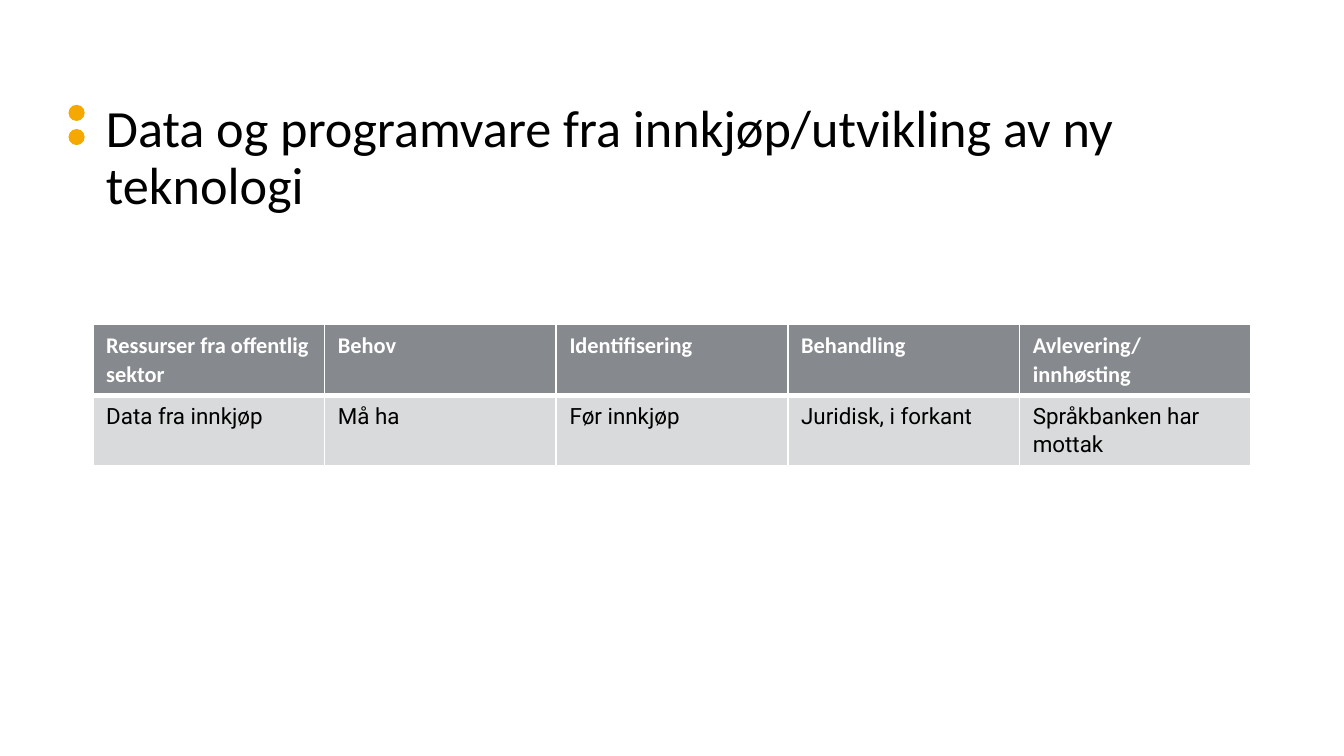
from lxml import etree
from pptx import Presentation
from pptx.dml.color import RGBColor
from pptx.enum import shapes, text
from pptx.oxml import ns
from pptx.util import Inches, Pt

TITLE = "Data og programvare fra innkjøp/utvikling av ny teknologi"
ROWS = [
    ["Ressurser fra offentlig sektor", "Behov", "Identifisering",
     "Behandling", "Avlevering/innhøsting"],
    ["Data fra innkjøp", "Må ha", "Før innkjøp",
     "Juridisk, i forkant", "Språkbanken har mottak"],
]
HEADER = {"fill": "86898D", "color": "FFFFFF", "font": "Calibri", "bold": True,
          "bottom": 3, "height": 0.53}
BODY = {"fill": "D9DADB", "color": "000000", "font": "Roboto", "bold": False,
        "bottom": 1, "height": 0.5}
LEFT, WIDTH = 0.69, 8.62
TABLE_TOP = 2.41
DOT_LEFT, DOT_TOP, DOT_SIZE, DOT_STEP = 0.51, 0.78, 0.12, 0.18


def paint(fill, color):
    fill.solid()
    fill.fore_color.rgb = RGBColor.from_string(color)


def style_font(font, name, size, color, bold=False):
    font.name, font.size, font.bold = name, Pt(size), bold
    font.color.rgb = RGBColor.from_string(color)


def set_borders(cell, widths, color="FFFFFF"):
    """Draw cell borders; widths maps side letters L, R, T, B to points."""
    properties = cell._tc.get_or_add_tcPr()
    for place, (side, width) in enumerate(widths.items()):
        line = etree.Element(ns.qn("a:ln" + side), w=str(int(Pt(width))))
        fill = etree.SubElement(line, ns.qn("a:solidFill"))
        etree.SubElement(fill, ns.qn("a:srgbClr"), val=color)
        properties.insert(place, line)


def add_dots(page):
    for index in range(2):
        dot = page.shapes.add_shape(
            shapes.MSO_SHAPE.OVAL, Inches(DOT_LEFT), Inches(DOT_TOP + index * DOT_STEP),
            Inches(DOT_SIZE), Inches(DOT_SIZE))
        dot.shadow.inherit = False
        paint(dot.fill, "F4A800")
        dot.line.fill.background()


def add_title(page):
    box = page.shapes.add_textbox(Inches(LEFT), Inches(0.71), Inches(WIDTH), Inches(0.95))
    frame = box.text_frame
    frame.word_wrap = True
    frame.vertical_anchor = text.MSO_ANCHOR.MIDDLE
    frame.text = TITLE
    para = frame.paragraphs[0]
    para.line_spacing = 0.9
    style_font(para.runs[0].font, "Calibri", 28, "000000")


def add_resource_table(page):
    styles = (HEADER, BODY)
    table = page.shapes.add_table(
        len(ROWS), len(ROWS[0]), Inches(LEFT), Inches(TABLE_TOP),
        Inches(WIDTH), Inches(sum(style["height"] for style in styles))).table
    for row, (words, style) in enumerate(zip(ROWS, styles)):
        table.rows[row].height = Inches(style["height"])
        top = HEADER["bottom"] if row else 1
        for column, word in enumerate(words):
            cell = table.cell(row, column)
            paint(cell.fill, style["fill"])
            set_borders(cell, {"L": 1, "R": 1, "T": top, "B": style["bottom"]})
            cell.text_frame.text = word
            para = cell.text_frame.paragraphs[0]
            para.line_spacing, para.space_after = 1.07, Pt(8)
            style_font(para.runs[0].font, style["font"], 12, style["color"], style["bold"])


def main():
    deck = Presentation()
    deck.slide_width = Inches(10)
    deck.slide_height = deck.slide_width * 9 // 16
    page = deck.slides.add_slide(deck.slide_layouts[6])
    add_dots(page)
    add_title(page)
    add_resource_table(page)
    deck.save("out.pptx")


if __name__ == "__main__":
    main()
